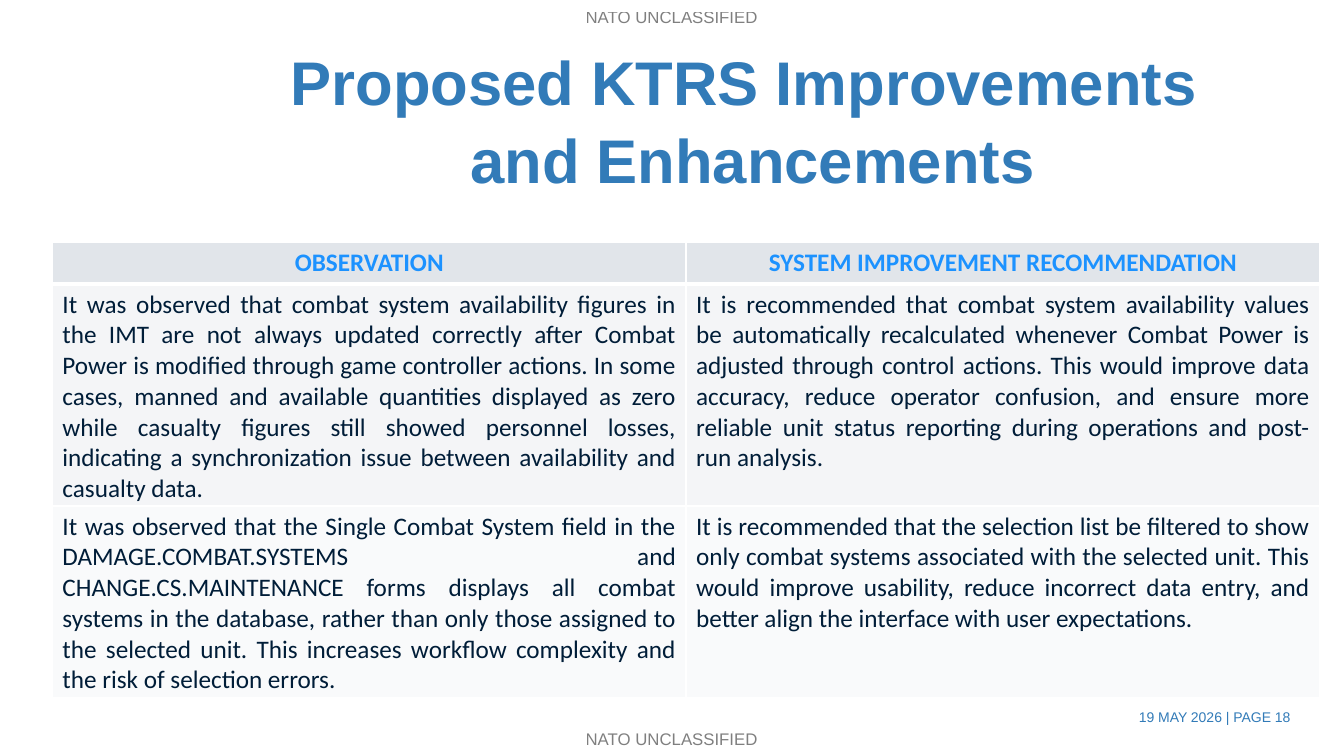
from dataclasses import dataclass

from lxml.etree import SubElement
from pptx import Presentation
from pptx.dml.color import RGBColor
from pptx.enum.text import MSO_ANCHOR as Anchor, PP_ALIGN as Align
from pptx.oxml.ns import qn
from pptx.util import Cm, Pt


@dataclass(frozen=True)
class Theme:
    heading_font: str = "Arial"
    table_font: str = "Calibri"
    blue: str = "327BB8"
    header_blue: str = "1C92FF"
    ink: str = "001D38"
    black: str = "000000"
    white: str = "FFFFFF"
    header_fill: str = "E1E5EA"
    row_fills: tuple = ("F4F5F7", "F9FAFB")
    title_size: int = 44
    table_size: int = 18
    marking_size: int = 12
    footer_size: int = 10


THEME = Theme()

TITLE = ["Proposed KTRS Improvements ", "and Enhancements"]
HEADERS = ["OBSERVATION", "SYSTEM IMPROVEMENT RECOMMENDATION"]
FINDINGS = [
    ("It was observed that combat system availability figures in the IMT are not "
     "always updated correctly after Combat Power is modified through game controller "
     "actions. In some cases, manned and available quantities displayed as zero while "
     "casualty figures still showed personnel losses, indicating a synchronization "
     "issue between availability and casualty data.",
     "It is recommended that combat system availability values be automatically "
     "recalculated whenever Combat Power is adjusted through control actions. This "
     "would improve data accuracy, reduce operator confusion, and ensure more reliable "
     "unit status reporting during operations and post-run analysis."),
    ("It was observed that the Single Combat System field in the "
     "DAMAGE.COMBAT.SYSTEMS and CHANGE.CS.MAINTENANCE forms displays all combat "
     "systems in the database, rather than only those assigned to the selected unit. "
     "This increases workflow complexity and the risk of selection errors.",
     "It is recommended that the selection list be filtered to show only combat "
     "systems associated with the selected unit. This would improve usability, reduce "
     "incorrect data entry, and better align the interface with user expectations."),
]


def write(frame, lines, *, size, color, font=THEME.heading_font, bold=False,
          align=Align.LEFT, spacing=None, opacity=None):
    """Fill a text frame with one formatted paragraph per line."""
    for index, line in enumerate(lines):
        paragraph = frame.paragraphs[0] if index == 0 else frame.add_paragraph()
        paragraph.alignment = align
        paragraph.line_spacing = spacing
        run = paragraph.add_run()
        run.text = line
        run.font.name = font
        run.font.size = Pt(size)
        run.font.bold = bold
        run.font.color.rgb = RGBColor.from_string(color)
        if opacity is not None:
            tint = run.font.fill._xPr.find(qn("a:solidFill"))[0]
            SubElement(tint, qn("a:alpha"), val=str(opacity * 1000))


def add_label(slide, text, left, top, width, height, *, margin=None, wrap=True,
              anchor=Anchor.TOP, **style):
    frame = slide.shapes.add_textbox(left, top, width, height).text_frame
    frame.word_wrap = wrap
    frame.vertical_anchor = anchor
    if margin is not None:
        frame.margin_left = frame.margin_right = margin
        frame.margin_top = frame.margin_bottom = margin
    write(frame, [text], **style)


def place_title(slide):
    title = slide.shapes.title
    title.left, title.top = Cm(5.03), Cm(0.89)
    title.width, title.height = Cm(27.89), Cm(4.01)
    title.text_frame.word_wrap = True
    title.text_frame.vertical_anchor = Anchor.TOP
    write(title.text_frame, TITLE, size=THEME.title_size, color=THEME.blue,
          bold=True, align=Align.CENTER, spacing=1.05)


def set_borders(cell, **widths):
    """Draw white cell borders; widths are in points, keyed by side."""
    properties = cell._tc.get_or_add_tcPr()
    for index, (side, width) in enumerate(widths.items()):
        line = properties.makeelement(qn(f"a:ln{side}"), {"w": str(Pt(width))})
        fill = SubElement(line, qn("a:solidFill"))
        SubElement(fill, qn("a:srgbClr"), val=THEME.white)
        properties.insert(index, line)


def add_findings_table(slide):
    row_heights = [Cm(1.04), Cm(5.59), Cm(4.82)]
    rows = [HEADERS, *FINDINGS]
    table = slide.shapes.add_table(len(rows), len(HEADERS), Cm(1.32), Cm(6.12),
                                   Cm(31.94), sum(row_heights)).table
    fills = [THEME.header_fill, *THEME.row_fills]
    for r, (texts, height, fill) in enumerate(zip(rows, row_heights, fills)):
        table.rows[r].height = height
        is_header = r == 0
        for c, text in enumerate(texts):
            cell = table.cell(r, c)
            cell.fill.solid()
            cell.fill.fore_color.rgb = RGBColor.from_string(fill)
            set_borders(cell, L=1, R=1, T=3 if r == 1 else 1, B=3 if is_header else 1)
            write(cell.text_frame, [text], size=THEME.table_size,
                  font=THEME.table_font, bold=is_header,
                  color=THEME.header_blue if is_header else THEME.ink,
                  align=Align.CENTER if is_header else Align.JUSTIFY)


def main():
    deck = Presentation()
    deck.slide_width, deck.slide_height = Cm(33.87), Cm(19.05)
    slide = deck.slides.add_slide(deck.slide_layouts[5])

    # Classification markings at the top and bottom edges
    for top in (Cm(0.18), Cm(18.36)):
        add_label(slide, "NATO UNCLASSIFIED", Cm(14.76), top, Cm(4.5), Cm(0.51),
                  margin=0, wrap=False, size=THEME.marking_size,
                  color=THEME.black, opacity=50)

    # Findings and recommendations
    add_findings_table(slide)

    # Date and page
    add_label(slide, "19 MAY 2026 | PAGE 18", Cm(25.15), Cm(17.55), Cm(7.62), Cm(1.02),
              anchor=Anchor.MIDDLE, size=THEME.footer_size, color=THEME.blue,
              align=Align.RIGHT)

    # Heading
    place_title(slide)

    deck.save("out.pptx")


if __name__ == "__main__":
    main()
